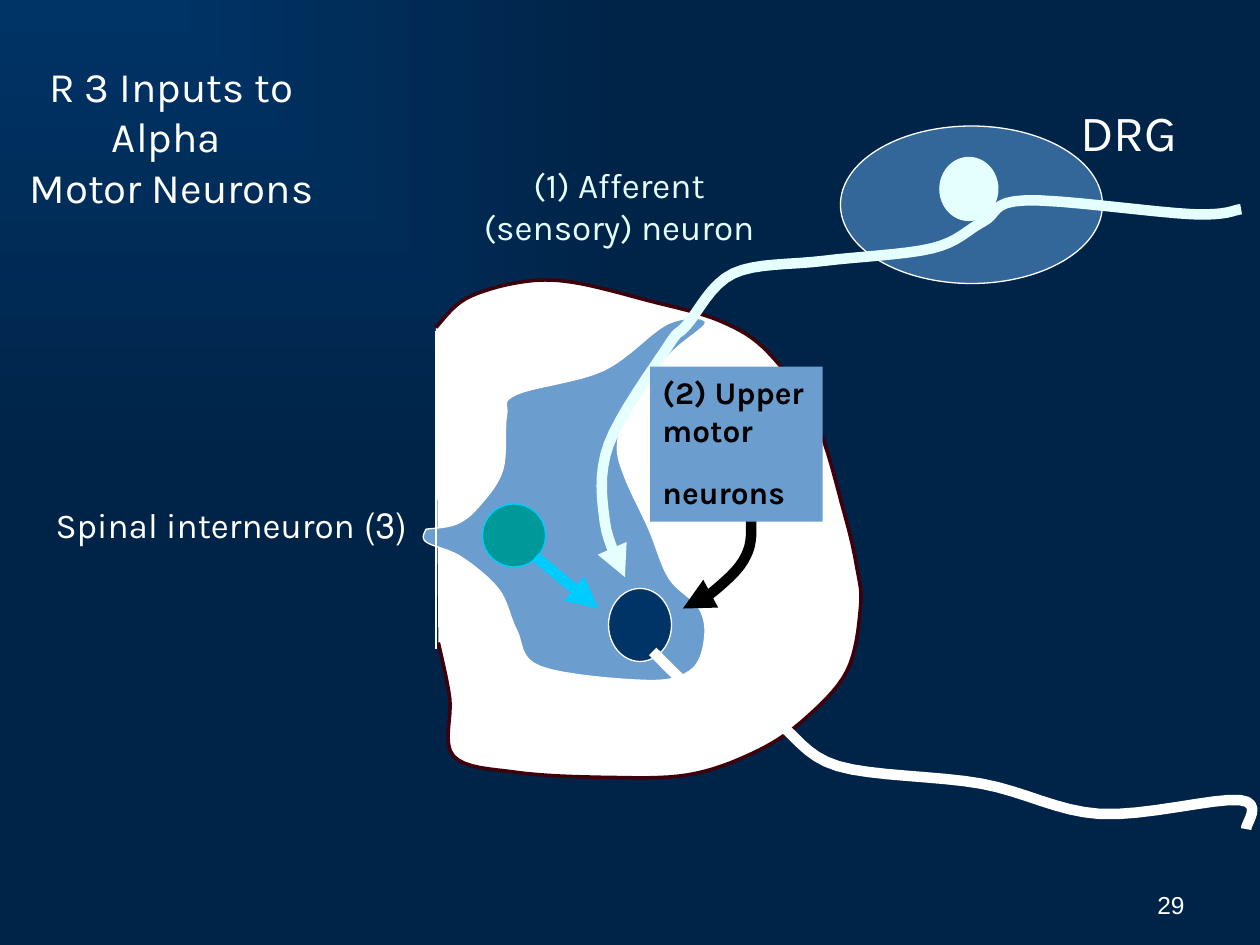
from lxml import etree
from pptx import Presentation
from pptx.dml.color import RGBColor
from pptx.enum.shapes import MSO_CONNECTOR, MSO_SHAPE
from pptx.enum.text import MSO_ANCHOR, PP_ALIGN
from pptx.oxml.ns import qn
from pptx.util import Inches, Pt

STRAIGHT, OVAL, BOX = MSO_CONNECTOR.STRAIGHT, MSO_SHAPE.OVAL, MSO_SHAPE.RECTANGLE
LEFT, CENTER, RIGHT = PP_ALIGN.LEFT, PP_ALIGN.CENTER, PP_ALIGN.RIGHT
TOP, MIDDLE, BOTTOM = MSO_ANCHOR.TOP, MSO_ANCHOR.MIDDLE, MSO_ANCHOR.BOTTOM

THEME = {
    "navy": "003366", "deep": "002448", "white": "FFFFFF", "black": "000000",
    "cord_edge": "3F000B", "gray_matter": "6B9DCF", "ganglion": "336699",
    "sensory": "E5FFFF", "inter": "009999", "inter_edge": "00CCFF",
    "font": "Karla", "number_font": "Arial",
    "title": 24, "drg": 29, "label": 20, "box": 18, "number": 14,
    "thin": 0.75, "edge": 2, "nerve": 6,
}

prs = Presentation()
prs.slide_width, prs.slide_height = Inches(10), Inches(7.5)
slide = prs.slides.add_slide(prs.slide_layouts[6])
shapes = slide.shapes

# Grid of 100 columns by 75 rows
COL, ROW = prs.slide_width / 100, prs.slide_height / 75


def grid(*values):
    """Alternating columns and rows as slide lengths."""
    return [round(v * (ROW if i % 2 else COL)) for i, v in enumerate(values)]


def smooth(knots, steps=8):
    """Points of a Catmull-Rom curve through the knots."""
    padded = [knots[0], *knots, knots[-1]]
    points = [knots[0]]
    for a, b, c, d in zip(padded, padded[1:], padded[2:], padded[3:]):
        for t in (step / steps for step in range(1, steps + 1)):
            points.append(tuple(
                q + t / 2 * (r - p + t * (2 * p - 5 * q + 4 * r - s
                                          + t * (3 * q - p - 3 * r + s)))
                for p, q, r, s in zip(a, b, c, d)))
    return points


# Background: glow from the top left corner
background = slide.background.fill
background.gradient()
for stop, colour in zip(background.gradient_stops, ("navy", "deep")):
    stop.color.rgb = RGBColor.from_string(THEME[colour])
gradient = slide._element.find(".//" + qn("a:gradFill"))
gradient.remove(gradient.find(qn("a:lin")))
glow = etree.SubElement(gradient, qn("a:path"), path="rect")
etree.SubElement(glow, qn("a:fillToRect"), r="100000", b="100000")

# Knots of the outlines, in columns and rows
spinal_cord = [
    (34.6, 26), (37, 23.7), (41.3, 22.4), (45.4, 22.4), (51.6, 23.9), (57.2, 25.5),
    (61, 28), (64.7, 33.3), (67, 40.7), (68, 45), (68.3, 48.2), (67.2, 53.3),
    (63.6, 57.3), (59.7, 59.8), (54.6, 61.5), (48.2, 61.7), (41, 61.3), (36, 60),
    (35.7, 55.4), (34.8, 51)]
gray_matter = [
    (33.8, 42), (36.2, 41.6), (38, 40.2), (39.9, 37.3), (40.2, 33), (41, 31.3),
    (47.9, 29.4), (53, 25.7), (56, 25.6), (53, 28.3), (49.8, 33), (49, 35.4),
    (49.6, 37.9), (51.5, 42), (53.1, 45.9), (55.5, 48.3), (55.9, 50.8), (54.8, 53.2),
    (51.3, 54), (42.9, 52.9), (41, 50), (39.6, 46.8), (36.6, 44.2), (33.8, 43),
    (33.8, 42)]
motor_axon = [(51.8, 51.7), (55.2, 54.9), (57.7, 55.7), (61.6, 57.3), (66.5, 60.8),
              (77.9, 62.2), (87.3, 64.6), (98.4, 63.5), (98.9, 65.8)]
afferent = [(98.5, 16.6), (94.6, 17), (81.4, 15.9), (78, 17.6), (74, 19.7),
            (65.4, 20.7), (58.2, 21.7), (54.5, 25.8), (53, 27.5), (48.3, 35.3),
            (48, 41.4), (49.6, 45.8)]
upper_motor = [(58.6, 34), (59.6, 41), (59, 44.5), (55.8, 47.6), (54.2, 48.3)]

# Anatomy from back to front: kind, geometry, fill, line, width, arrow
anatomy = [
    ("curve", spinal_cord, "white", "cord_edge", "edge", False),
    ("curve", gray_matter, "gray_matter", "white", "thin", False),
    ("line", (34.6, 26.3, 34.6, 51.5), None, "white", "thin", False),
    (OVAL, (48.3, 46.7, 5, 5.8), "navy", "white", "thin", False),
    ("curve", motor_axon, None, "white", "nerve", False),
    (OVAL, (66.7, 10, 20.8, 12.5), "ganglion", "white", "thin", False),
    (OVAL, (74.6, 12.5, 4.6, 5), "sensory", "sensory", "thin", False),
    ("line", (78.4, 17.3, 78.4, 15), None, "sensory", "nerve", False),
    ("curve", afferent, None, "sensory", "nerve", True),
    ("curve", upper_motor, None, "black", "nerve", True),
    (OVAL, (38.3, 40, 5, 5), "inter", "inter_edge", "thin", False),
    ("line", (42.5, 44.2, 47.5, 48.3), None, "inter_edge", "nerve", True),
    (BOX, (51.6, 29.1, 13.7, 12.3), "gray_matter", None, None, False),
]
for kind, geometry, fill, line, width, arrow in anatomy:
    if kind == "line":
        part = shapes.add_connector(STRAIGHT, *grid(*geometry))
    elif kind == "curve":
        start, *rest = [grid(*point) for point in smooth(geometry)]
        builder = shapes.build_freeform(*start)
        builder.add_line_segments(rest, close=geometry[0] == geometry[-1])
        part = builder.convert_to_shape()
    else:
        part = shapes.add_shape(kind, *grid(*geometry))
    if fill:
        part.fill.solid()
        part.fill.fore_color.rgb = RGBColor.from_string(THEME[fill])
    elif kind != "line":
        part.fill.background()
    if line:
        part.line.color.rgb = RGBColor.from_string(THEME[line])
        part.line.width = Pt(THEME[width])
    else:
        part.line.fill.background()
    if arrow:
        etree.SubElement(part.line._get_or_add_ln(), qn("a:tailEnd"), type="triangle")
    etree.SubElement(part._element.spPr, qn("a:effectLst"))
motor_box = part

# Texts: place or holder, lines, size, colour, alignment, anchor, extras
texts = [
    ((0, 0, 27.2, 21.6), ["R 3 Inputs to Alpha \vMotor Neurons"], "title", "white",
     CENTER, MIDDLE, {}),
    ((71.7, 68.3, 23.3, 5.2), ["29"], "number", "white", RIGHT, BOTTOM,
     {"font": "number_font"}),
    ((0, 35, 36.7, 13.3), ["(3) Spinal interneuron"], "label", "white", CENTER, MIDDLE,
     {"rtl": True}),
    ((81.7, 5, 15.8, 10.8), ["DRG"], "drg", "white", CENTER, MIDDLE, {"rtl": True}),
    ((35.8, 12.5, 26.7, 7.7), ["(1) Afferent (sensory) neuron"], "label", "sensory",
     CENTER, TOP, {}),
    (motor_box, ["(2) Upper", "motor", "neurons"], "box", "black", LEFT, TOP,
     {"bold": True, "wrap": False, "last_gap": 14}),
]
for place, lines, size, colour, align, anchor, extra in texts:
    holder = shapes.add_textbox(*grid(*place)) if isinstance(place, tuple) else place
    frame = holder.text_frame
    frame.text = "\n".join(lines)
    frame.word_wrap, frame.vertical_anchor = extra.get("wrap", True), anchor
    look = {"name": THEME[extra.get("font", "font")], "size": Pt(THEME[size]),
            "bold": extra.get("bold", False)}
    for paragraph in frame.paragraphs:
        paragraph.alignment = align
        if extra.get("rtl"):
            paragraph._p.get_or_add_pPr().set("rtl", "1")
        for run in paragraph.runs:
            for name, value in look.items():
                setattr(run.font, name, value)
            run.font.color.rgb = RGBColor.from_string(THEME[colour])
    if "last_gap" in extra:
        paragraph.space_before = Pt(extra["last_gap"])

prs.save("out.pptx")
